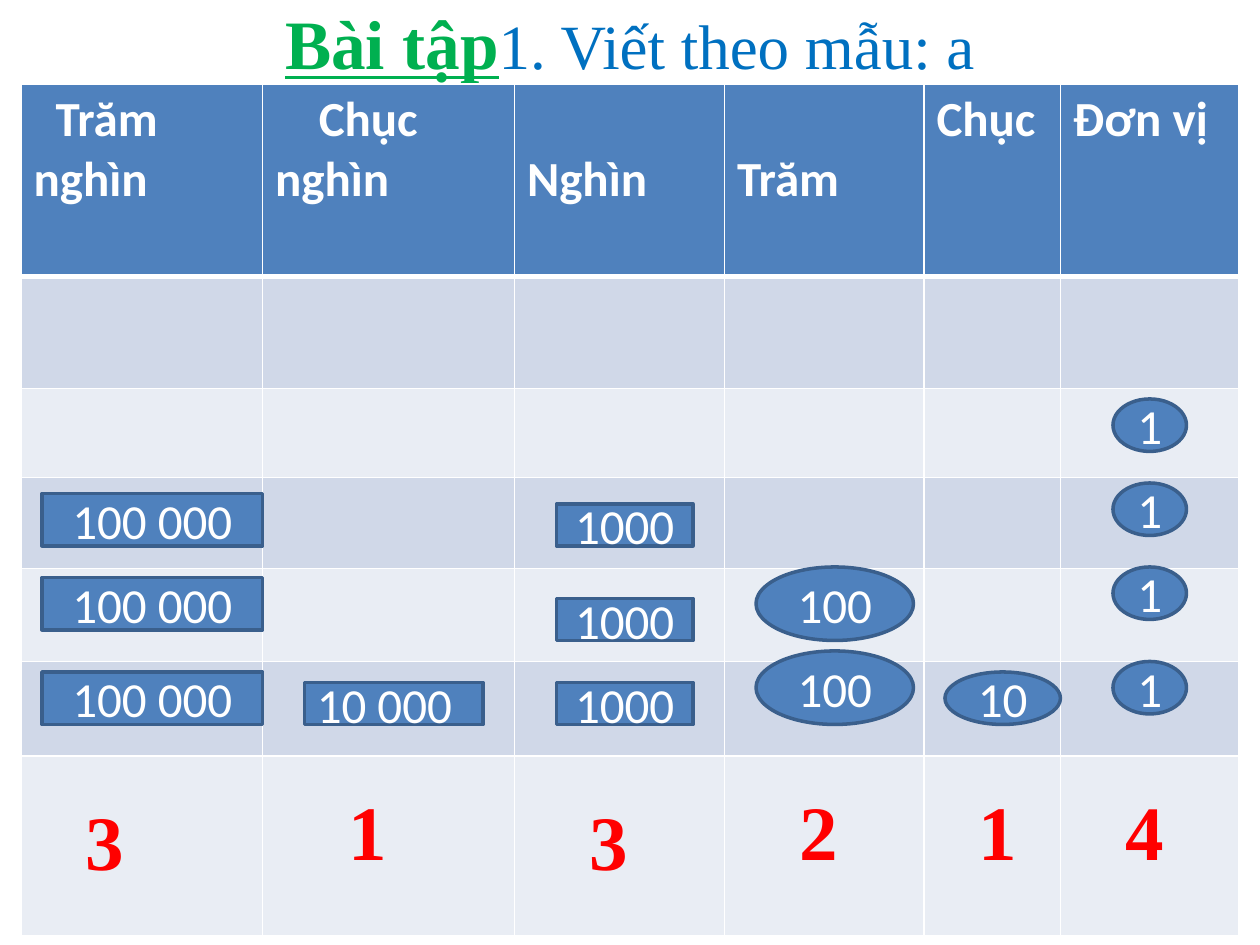
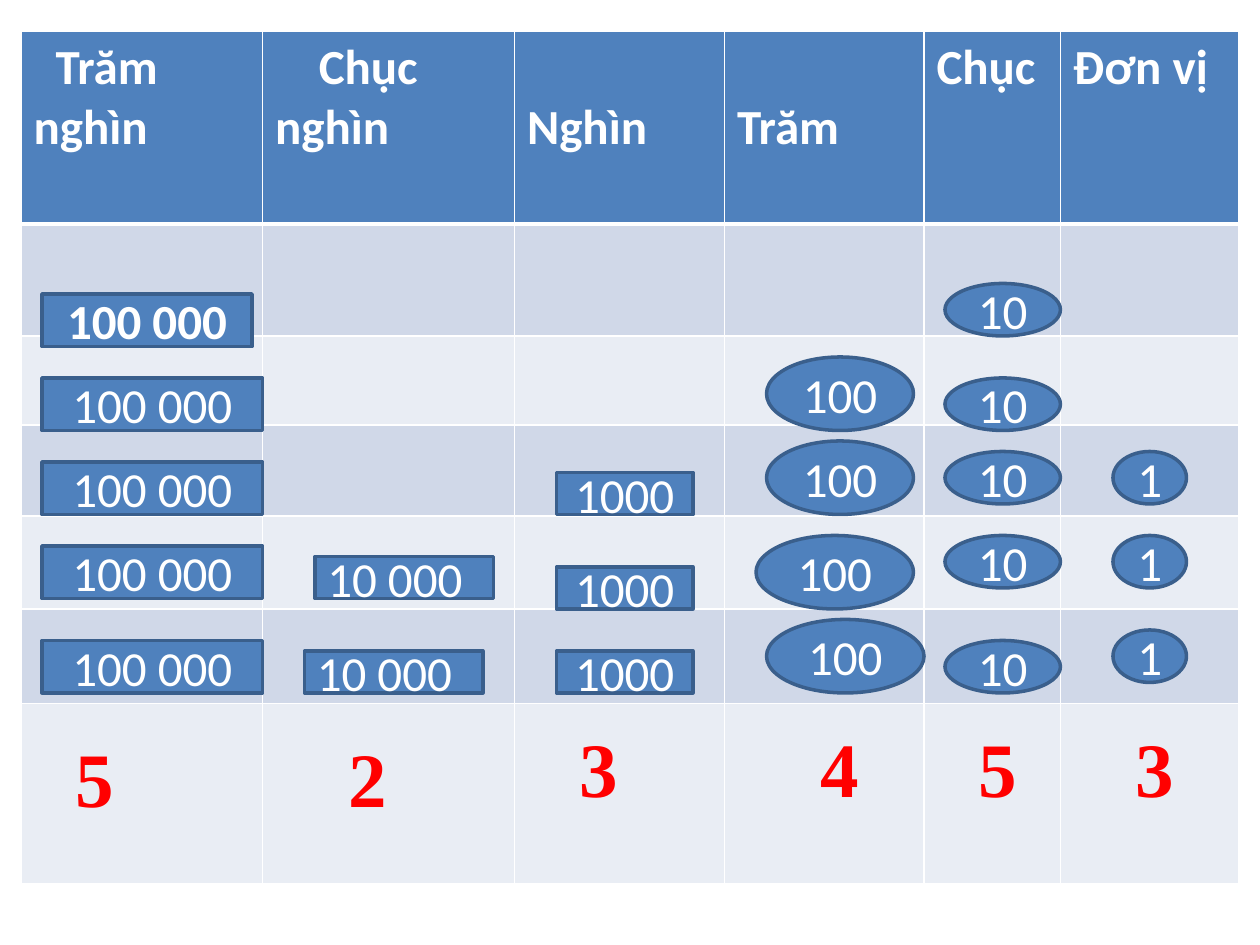
"""Build two place-value slides with counters and digits."""
from pptx import Presentation
from pptx.dml.color import RGBColor
from pptx.enum import shapes, text
from pptx.oxml import parse_xml
from pptx.oxml.ns import nsdecls
from pptx.util import Pt

BLUE = RGBColor(0x4F, 0x81, 0xBD)
EDGE = RGBColor(0x3A, 0x5F, 0x8C)
DARK = RGBColor(0xD0, 0xD8, 0xE8)
PALE = RGBColor(0xE9, 0xED, 0xF4)
WHITE = RGBColor(0xFF, 0xFF, 0xFF)
RED = RGBColor(0xFF, 0x00, 0x00)
GREEN = RGBColor(0x00, 0xB0, 0x50)
SKY = RGBColor(0x00, 0x70, 0xC0)
SERIF, SANS = "Times New Roman", "Calibri"
RECT = shapes.MSO_SHAPE.RECTANGLE
OVAL = shapes.MSO_SHAPE.OVAL
CENTER, LEFT = text.PP_ALIGN.CENTER, text.PP_ALIGN.LEFT

COLS = [138, 144, 120, 114, 78, 102]
ROWS = [110, 64, 51, 52, 53, 54, 103]
HEADS = [("Trăm nghìn", 12.6, 3.6), ("Chục nghìn", 25, 3.6), ("Nghìn", 0, 37.8),
         ("Trăm", 0, 37.8), ("Chục", 0, 3.6), ("Đơn vị", 0, 3.6)]
CHIPS = [("100 000", RECT, 24, 126, 30), ("10 000", RECT, 174, 102, 24),
         ("1000", RECT, 318, 78, 24), ("100", OVAL, 432, 90, 42),
         ("10", OVAL, 540, 66, 30), ("1", OVAL, 636, 42, 30)]
PAGES = [
    {"top": 48,
     "chips": [[282, 330, 384], [390], [288, 342, 390], [324, 372], [384],
               [228, 276, 324, 378]],
     "shifts": {},
     "digits": [("3", 42, 450), ("1", 192, 444), ("3", 330, 450),
                ("2", 450, 444), ("1", 552, 444), ("4", 636, 444)]},
    {"top": 18,
     "chips": [[168, 216, 264, 312, 366], [318, 372], [270, 324, 372],
               [204, 252, 306, 354], [162, 216, 258, 306, 366],
               [258, 306, 360]],
     "shifts": {("100 000", 168): (0, -6), ("10 000", 318): (6, 0),
                ("100", 204): (6, -6), ("100", 252): (6, -6),
                ("100", 354): (6, 0)},
     "digits": [("5", 36, 414), ("2", 192, 414), ("3", 324, 408),
                ("4", 462, 408), ("5", 552, 408), ("3", 642, 408)]},
]


def style(run, size, face, color, bold=False):
    font = run.font
    font.size, font.name, font.bold = Pt(size), face, bold
    font.color.rgb = color


def edge(cell, base):
    props = cell._tc.get_or_add_tcPr()
    widths = [("lnL", 1), ("lnR", 1), ("lnT", 1), ("lnB", base)]
    for spot, (tag, width) in enumerate(widths):
        props.insert(spot, parse_xml(
            f'<a:{tag} {nsdecls("a")} w="{Pt(width)}"><a:solidFill>'
            f'<a:srgbClr val="{WHITE}"/></a:solidFill></a:{tag}>'))


deck = Presentation()
deck.slide_width, deck.slide_height = Pt(720), Pt(540)

for num, page in enumerate(PAGES):
    slide = deck.slides.add_slide(deck.slide_layouts[6])

    if num == 0:
        box = slide.shapes.add_textbox(Pt(36), Pt(0), Pt(648), Pt(48))
        frame = box.text_frame
        frame.word_wrap = True
        frame.margin_top = frame.margin_bottom = Pt(0)
        frame.vertical_anchor = text.MSO_ANCHOR.MIDDLE
        para = frame.paragraphs[0]
        para.alignment = CENTER
        lead, rest = para.add_run(), para.add_run()
        lead.text, rest.text = "Bài tập", "1. Viết theo mẫu: a"
        style(lead, 39.6, SERIF, GREEN, True)
        lead.font.underline = True
        style(rest, 36, SERIF, SKY)

    grid = slide.shapes.add_table(
        len(ROWS), len(COLS), Pt(12), Pt(page["top"]),
        Pt(sum(COLS)), Pt(sum(ROWS))).table
    for col, width in zip(grid.columns, COLS):
        col.width = Pt(width)
    for row, height in enumerate(ROWS):
        grid.rows[row].height = Pt(height)
        for cell in grid.rows[row].cells:
            cell.fill.solid()
            cell.fill.fore_color.rgb = (DARK if row % 2 else PALE) if row else BLUE
            edge(cell, 1 if row else 3)
    for cell, (head, indent, gap) in zip(grid.rows[0].cells, HEADS):
        cell.text_frame.text = head
        cell.margin_top = Pt(gap)
        para = cell.text_frame.paragraphs[0]
        para._p.get_or_add_pPr().set("indent", str(Pt(indent)))
        style(para.runs[0], 28, SANS, WHITE, True)

    for (label, kind, left, width, height), tops in zip(CHIPS, page["chips"]):
        for top in tops:
            move, grow = page["shifts"].get((label, top), (0, 0))
            chip = slide.shapes.add_shape(
                kind, Pt(left + move), Pt(top), Pt(width + grow), Pt(height))
            chip.shadow.inherit = False
            chip.fill.solid()
            chip.fill.fore_color.rgb = BLUE
            chip.line.color.rgb = EDGE
            chip.line.width = Pt(2)
            chip.text_frame.text = label
            para = chip.text_frame.paragraphs[0]
            para.alignment = LEFT if label == "10 000" else CENTER
            bold = label == "100 000" and grow != 0
            style(para.runs[0], 28, SANS, WHITE, bold)

    for digit, left, top in page["digits"]:
        box = slide.shapes.add_textbox(
            Pt(left), Pt(top), Pt(min(84, 720 - left)), Pt(60))
        box.text_frame.word_wrap = True
        box.text_frame.text = digit
        style(box.text_frame.paragraphs[0].runs[0], 44, SERIF, RED, True)

deck.save("out.pptx")
